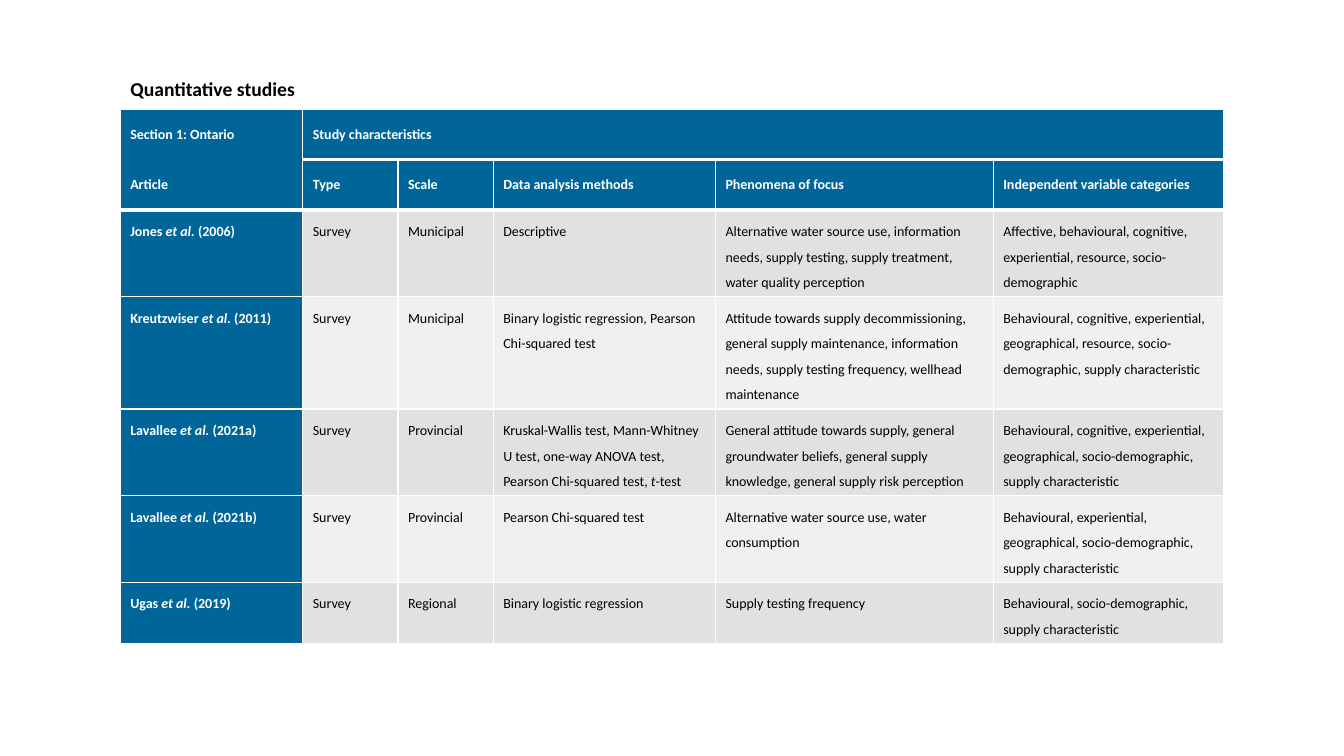
from lxml.etree import SubElement
from pptx import Presentation
from pptx.dml.color import RGBColor
from pptx.enum.text import MSO_ANCHOR as Anchor, MSO_AUTO_SIZE as AutoSize, PP_ALIGN as Align
from pptx.oxml.ns import qn
from pptx.util import Cm, Pt

BLUE = RGBColor(0x00, 0x66, 0x99)
WHITE = RGBColor(0xFF, 0xFF, 0xFF)
BLACK = RGBColor(0x00, 0x00, 0x00)
DARK_BAND = RGBColor(0xE1, 0xE1, 0xE1)
LIGHT_BAND = RGBColor(0xF0, 0xF0, 0xF0)

HEADERS = [
    ["Section 1: Ontario", "Study characteristics", "", "", "", ""],
    ["Article", "Type", "Scale", "Data analysis methods", "Phenomena of focus",
     "Independent variable categories"],
]
STUDIES = [
    ["Jones *et al.* (2006)", "Survey", "Municipal", "Descriptive",
     "Alternative water source use, information needs, supply testing, "
     "supply treatment, water quality perception",
     "Affective, behavioural, cognitive, experiential, resource, socio-demographic"],
    ["Kreutzwiser *et al.* (2011)", "Survey", "Municipal",
     "Binary logistic regression, Pearson Chi-squared test",
     "Attitude towards supply decommissioning, general supply maintenance, "
     "information needs, supply testing frequency, wellhead maintenance",
     "Behavioural, cognitive, experiential, geographical, resource, "
     "socio-demographic, supply characteristic"],
    ["Lavallee *et al.* (2021a)", "Survey", "Provincial",
     "Kruskal-Wallis test, Mann-Whitney U test, one-way ANOVA test, "
     "Pearson Chi-squared test, *t*-test",
     "General attitude towards supply, general groundwater beliefs, "
     "general supply knowledge, general supply risk perception",
     "Behavioural, cognitive, experiential, geographical, socio-demographic, "
     "supply characteristic"],
    ["Lavallee *et al.* (2021b)", "Survey", "Provincial", "Pearson Chi-squared test",
     "Alternative water source use, water consumption",
     "Behavioural, experiential, geographical, socio-demographic, supply characteristic"],
    ["Ugas *et al.* (2019)", "Survey", "Regional", "Binary logistic regression",
     "Supply testing frequency",
     "Behavioural, socio-demographic, supply characteristic"],
]
COLUMN_WIDTHS = [4.6, 2.4, 2.4, 5.6, 7, 5.8]
ROW_HEIGHTS = [1.27, 1.27, 2.16, 2.84, 2.18, 2.18, 1.54]


def write_text(frame, text, size=10, color=BLACK, bold=False, align=Align.LEFT, spacing=None):
    """Write one paragraph in which asterisks enclose italic words."""
    paragraph = frame.paragraphs[0]
    paragraph.alignment = align
    paragraph.line_spacing = spacing
    for index, words in enumerate(text.split("*")):
        if words:
            run = paragraph.add_run()
            run.text = words
            run.font.name = "Calibri"
            run.font.size = Pt(size)
            run.font.color.rgb = color
            run.font.bold = bold
            run.font.italic = index % 2 == 1


def draw_borders(cell, top, bottom):
    """Rule a cell in white with the given top and bottom widths in points."""
    properties = cell._tc.get_or_add_tcPr()
    for side, width in zip("LRTB", (1, 1, top, bottom)):
        line = SubElement(properties, qn(f"a:ln{side}"), w=str(Pt(width)))
        if width:
            fill = SubElement(line, qn("a:solidFill"))
            SubElement(fill, qn("a:srgbClr"), val=str(WHITE))
        else:
            SubElement(line, qn("a:noFill"))


def add_heading(slide, left, top, width, height):
    """Place the slide title in the given box."""
    heading = slide.shapes.title
    heading.left, heading.top, heading.width, heading.height = left, top, width, height
    frame = heading.text_frame
    frame.word_wrap = True
    frame.auto_size = AutoSize.NONE
    frame.vertical_anchor = Anchor.MIDDLE
    write_text(frame, "Quantitative studies", size=14, bold=True)


def add_studies_table(slide, left, top, width, height):
    """Fill the given box with the table of studies."""
    rows = HEADERS + STUDIES
    table = slide.shapes.add_table(len(rows), len(COLUMN_WIDTHS), left, top, width, height).table
    for column, share in zip(table.columns, COLUMN_WIDTHS):
        column.width = int(width * share / sum(COLUMN_WIDTHS))
    for row, share in zip(table.rows, ROW_HEIGHTS):
        row.height = int(height * share / sum(ROW_HEIGHTS))
    for r, texts in enumerate(rows):
        is_header = r < len(HEADERS)
        band = LIGHT_BAND if r % 2 else DARK_BAND
        for c, text in enumerate(texts):
            cell = table.cell(r, c)
            is_label = is_header or c == 0
            top_rule = 3 if r in (1, 2) else 1
            bottom_rule = 3 if is_header else 1
            if c == 0 and r == 0:
                bottom_rule = 0
            elif c == 0 and r == 1:
                top_rule = 0
            draw_borders(cell, top_rule, bottom_rule)
            cell.fill.solid()
            cell.fill.fore_color.rgb = BLUE if is_label else band
            cell.vertical_anchor = Anchor.MIDDLE if is_header else Anchor.TOP
            write_text(cell.text_frame, text, bold=is_label,
                       color=WHITE if is_label else BLACK,
                       align=Align.JUSTIFY if is_header and c == 0 else Align.LEFT,
                       spacing=None if is_header else 1.5)
    table.cell(0, 1).merge(table.cell(0, len(COLUMN_WIDTHS) - 1))


def main():
    """Build the slide and save it."""
    deck = Presentation()
    deck.slide_width, deck.slide_height = Cm(33.87), Cm(19.05)
    slide = deck.slides.add_slide(deck.slide_layouts[5])
    left, width = Cm(3.03), Cm(sum(COLUMN_WIDTHS))
    add_heading(slide, left, Cm(1.73), width, Cm(1))
    add_studies_table(slide, left, Cm(2.75), width, Cm(sum(ROW_HEIGHTS)))
    deck.save("out.pptx")


if __name__ == "__main__":
    main()
